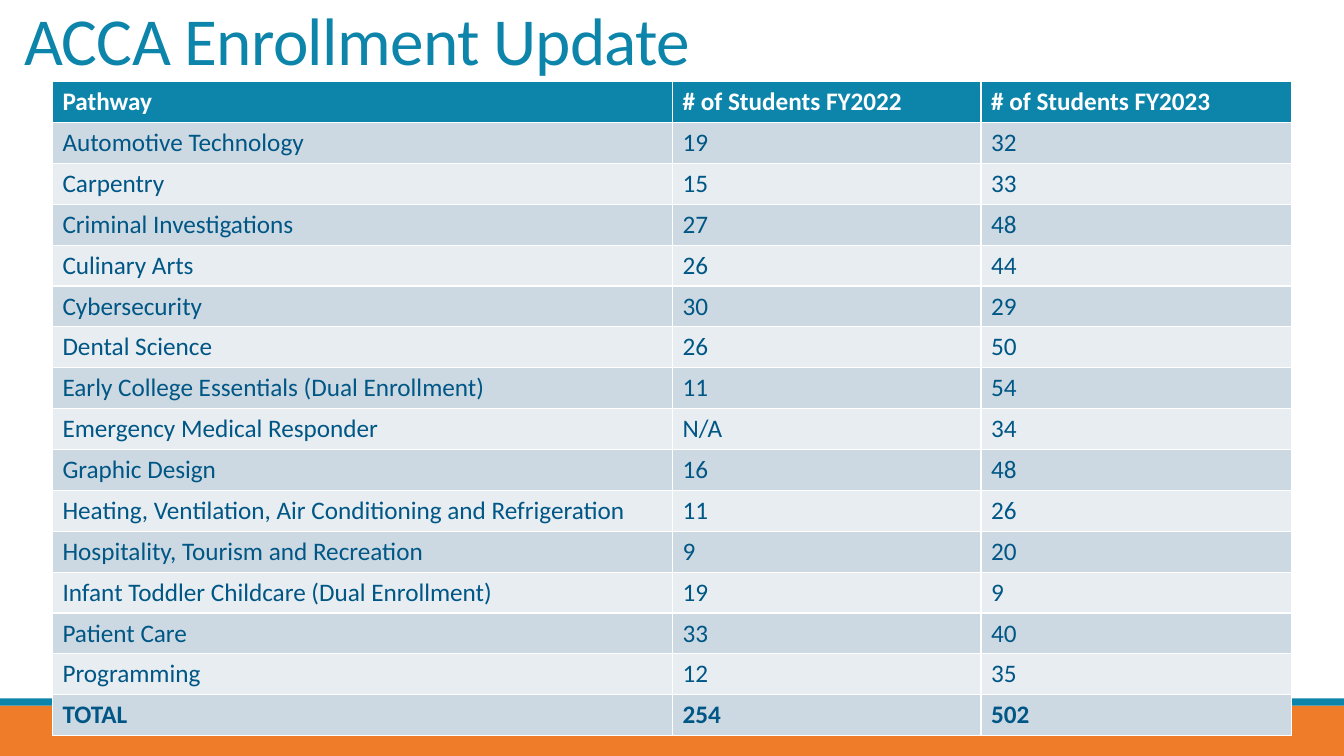
"""Build the ACCA enrollment slide: a title, a table of pathways and a footer band."""
from pptx import Presentation
from pptx.dml.color import RGBColor
from pptx.enum.shapes import MSO_SHAPE
from pptx.enum.text import MSO_ANCHOR, MSO_AUTO_SIZE, PP_ALIGN
from pptx.util import Inches, Pt

RECTANGLE = MSO_SHAPE.RECTANGLE
BOTTOM = MSO_ANCHOR.BOTTOM
LEFT = PP_ALIGN.LEFT
NO_AUTOFIT = MSO_AUTO_SIZE.NONE

TEAL = RGBColor(0x0D, 0x85, 0xAB)
ORANGE = RGBColor(0xEE, 0x7C, 0x29)
NAVY = RGBColor(0x00, 0x56, 0x85)
WHITE = RGBColor(0xFF, 0xFF, 0xFF)
DARK_BAND = RGBColor(0xCC, 0xD9, 0xE2)
LIGHT_BAND = RGBColor(0xE7, 0xED, 0xF1)

ENROLLMENT = [
    ("Pathway", "# of Students FY2022", "# of Students FY2023"),
    ("Automotive Technology", "19", "32"),
    ("Carpentry", "15", "33"),
    ("Criminal Investigations", "27", "48"),
    ("Culinary Arts", "26", "44"),
    ("Cybersecurity", "30", "29"),
    ("Dental Science", "26", "50"),
    ("Early College Essentials (Dual Enrollment)", "11", "54"),
    ("Emergency Medical Responder", "N/A", "34"),
    ("Graphic Design", "16", "48"),
    ("Heating, Ventilation, Air Conditioning and Refrigeration", "11", "26"),
    ("Hospitality, Tourism and Recreation", "9", "20"),
    ("Infant Toddler Childcare (Dual Enrollment)", "19", "9"),
    ("Patient Care", "33", "40"),
    ("Programming", "12", "35"),
    ("TOTAL", "254", "502"),
]
COLUMN_WIDTHS = [6.15, 3.06, 3.08]
TABLE_HEIGHT = 6.49


def write(frame, text, size=18, color=NAVY, bold=False):
    """Put one formatted run in a text frame and return its paragraph and run."""
    para = frame.paragraphs[0]
    para.alignment = LEFT
    span = para.add_run()
    span.text = text
    span.font.name = "Calibri"
    span.font.size = Pt(size)
    span.font.color.rgb = color
    span.font.bold = bold
    return para, span


deck = Presentation()
deck.slide_width = Inches(13.33)
deck.slide_height = Inches(7.5)
page = deck.slides.add_slide(deck.slide_layouts[5])

for top, height, color in [(7, 0.5, ORANGE), (6.93, 0.07, TEAL)]:
    band = page.shapes.add_shape(RECTANGLE, 0, Inches(top), deck.slide_width, Inches(height))
    band.shadow.inherit = False
    band.fill.solid()
    band.fill.fore_color.rgb = color
    band.line.fill.background()

title = page.shapes.title
title.left, title.top = Inches(0.14), 0
title.width, title.height = Inches(11), Inches(0.84)
title.text_frame.auto_size = NO_AUTOFIT
title.text_frame.vertical_anchor = BOTTOM
heading, heading_span = write(title.text_frame, "ACCA Enrollment Update", size=48, color=TEAL)
heading.line_spacing = 0.85
heading_span.font._element.set("spc", "-50")

table = page.shapes.add_table(
    len(ENROLLMENT), len(COLUMN_WIDTHS),
    Inches(0.52), Inches(0.81), Inches(sum(COLUMN_WIDTHS)), Inches(TABLE_HEIGHT),
).table
for column, width in zip(table.columns, COLUMN_WIDTHS):
    column.width = Inches(width)

last = len(ENROLLMENT) - 1
for row, values in enumerate(ENROLLMENT):
    header = row == 0
    band_color = DARK_BAND if row % 2 else LIGHT_BAND
    for column, value in enumerate(values):
        cell = table.cell(row, column)
        cell.fill.solid()
        cell.fill.fore_color.rgb = TEAL if header else band_color
        write(cell.text_frame, value, color=WHITE if header else NAVY, bold=row in (0, last))

deck.save("out.pptx")
